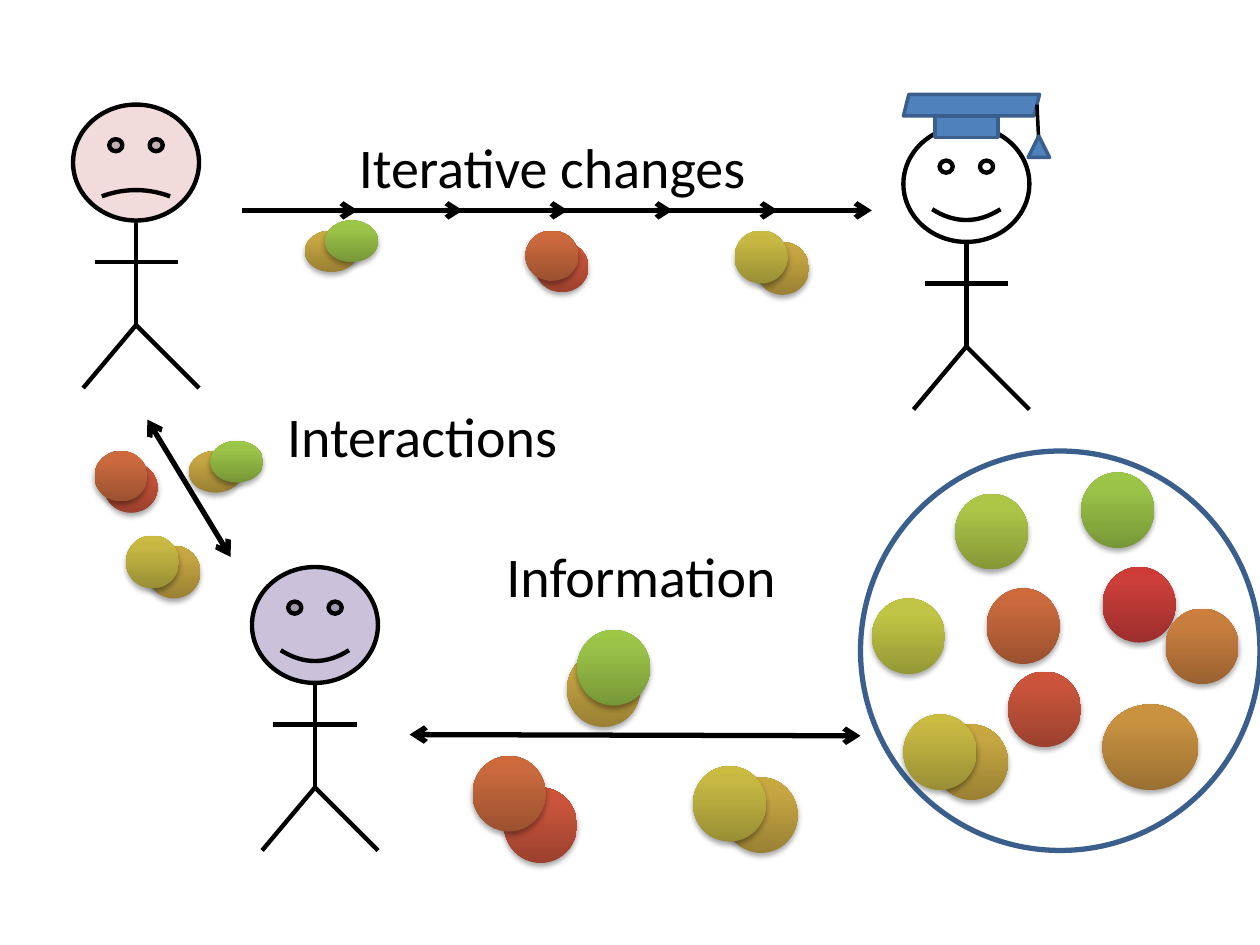
from copy import deepcopy

from pptx import Presentation, util as u
from pptx.dml.color import RGBColor
from pptx.enum import shapes, text
from pptx.oxml import parse_xml
from pptx.oxml.ns import nsdecls, qn
from pptx.oxml.xmlchemy import OxmlElement

BLACK = RGBColor(0x00, 0x00, 0x00)
BLUE = RGBColor(0x4F, 0x81, 0xBD)
NAVY = RGBColor(0x3A, 0x5F, 0x8C)
PINK = RGBColor(0xF2, 0xDC, 0xDB)
LILAC = RGBColor(0xCC, 0xC1, 0xDA)


def shades(*codes):
    return [RGBColor.from_string(c) for c in codes]


# Ball colours: bottom, upper part, top
CRIMSON = shades("9C2F2D", "CB3E3A", "CE3B37")
RED = shades("9B412E", "C9543B", "CD5339")
RUST = shades("9B512F", "C9693D", "CD693B")
ORANGE = shades("9A6130", "C87E3F", "CC7E3C")
AMBER = shades("9A7031", "C89240", "CB933D")
GOLD = shades("998033", "C6A642", "CAA840")
OLIVE = shades("998E34", "C6B843", "CABB41")
LIME = shades("949835", "C0C545", "C3C842")
MOSS = shades("859736", "ADC547", "AFC845")
GREEN = shades("779737", "9BC348", "9DC746")

SHADOW = (f'<a:outerShdw {nsdecls("a")} blurRad="40000" dist="23000" dir="5400000" '
          'rotWithShape="0"><a:srgbClr val="000000"><a:alpha val="35000"/>'
          '</a:srgbClr></a:outerShdw>')
SHAPE = shapes.MSO_SHAPE


class Sketch:
    FONT = {"name": "Calibri", "size": u.Pt(32)}

    def __init__(self, slide):
        self.s = slide

    def shape(self, kind, x, y, w, h, fill=None, line=None, width=2):
        sp = self.s.shapes.add_shape(kind, *map(u.Inches, (x, y, w, h)))
        sp.shadow.inherit = False
        if fill is None:
            sp.fill.background()
        else:
            sp.fill.solid()
            sp.fill.fore_color.rgb = fill
        if line is None:
            sp.line.fill.background()
        else:
            sp.line.color.rgb = line
            sp.line.width = u.Pt(width)
        return sp

    def line(self, x1, y1, x2, y2, width=2.5, ends=()):
        c = self.s.shapes.add_connector(
            shapes.MSO_CONNECTOR.STRAIGHT, *map(u.Inches, (x1, y1, x2, y2)))
        c.line.color.rgb = BLACK
        c.line.width = u.Pt(width)
        props = c._element.spPr
        for end in ends:
            arrow = OxmlElement(f"a:{end}")
            arrow.set("type", "arrow")
            props.find(qn("a:ln")).append(arrow)
        props.append(OxmlElement("a:effectLst"))

    def ball(self, colours, x, y, w=0.58, h=0.6):
        sp = self.shape(SHAPE.OVAL, x, y, w, h)
        sp.fill.gradient()
        sp.fill.gradient_angle = 90
        props = sp._element.spPr
        stops = props.find(qn("a:gradFill")).find(qn("a:gsLst"))
        stops.append(deepcopy(stops[-1]))
        for stop, place, colour in zip(sp.fill.gradient_stops, (0, 0.8, 1), colours):
            stop.position = place
            stop.color.rgb = colour
        props.find(qn("a:effectLst")).append(parse_xml(SHADOW))

    def pair(self, back, front, w=0.58, h=0.6):
        for colours, x, y in (back, front):
            self.ball(colours, x, y, w, h)

    def person(self, x, y, fill=None, smile=0.047):
        for x1, y1, x2, y2 in (
            (0.5, 0.92, 0.5, 1.75),    # body
            (0.17, 1.25, 0.83, 1.25),  # arms
            (0.5, 1.75, 0.08, 2.25),   # legs
            (0.5, 1.75, 1, 2.25),
        ):
            self.line(x + x1, y + y1, x + x2, y + y2)
        face = self.shape(SHAPE.SMILEY_FACE, x, y, 1, 0.92, fill, BLACK, 2.5)
        face.adjustments[0] = smile

    def label(self, words, x, y, w, h=0.64):
        tf = self.s.shapes.add_textbox(*map(u.Inches, (x, y, w, h))).text_frame
        tf.word_wrap = True
        tf.auto_size = text.MSO_AUTO_SIZE.SHAPE_TO_FIT_TEXT
        r = tf.paragraphs[0].add_run()
        r.text = words
        for key, value in self.FONT.items():
            setattr(r.font, key, value)
        r.font.color.rgb = BLACK


def main():
    prs = Presentation()
    prs.slide_width, prs.slide_height = u.Inches(10), u.Inches(7.5)
    sk = Sketch(prs.slides.add_slide(prs.slide_layouts[6]))
    both = ("headEnd", "tailEnd")

    # Pool of information
    sk.shape(SHAPE.OVAL, 6.83, 3.58, 3.17, 3.17, line=NAVY, width=3)
    for colours, x, y in (
        (CRIMSON, 8.75, 4.5), (RED, 8, 5.33), (RUST, 7.83, 4.67),
        (ORANGE, 9.25, 4.83), (LIME, 6.92, 4.75), (MOSS, 7.58, 3.92),
        (GREEN, 8.58, 3.75),
    ):
        sk.ball(colours, x, y)
    sk.ball(AMBER, 8.75, 5.59, 0.76, 0.68)
    sk.pair((GOLD, 7.42, 5.75), (OLIVE, 7.17, 5.67))

    # Teacher and the information exchanged with the pool
    sk.person(2, 4.5, LILAC)
    sk.pair((GOLD, 4.5, 5.17), (GREEN, 4.58, 5))
    sk.pair((RED, 4, 6.25), (RUST, 3.75, 6))
    sk.pair((GOLD, 5.75, 6.17), (OLIVE, 5.5, 6.08))
    sk.line(3.25, 5.83, 6.83, 5.84, 3, both)
    sk.label("Information", 3.92, 4.25, 2.5)

    # Learner and the interactions with the teacher
    sk.person(0.58, 0.83, PINK, smile=-0.027)
    sk.line(1.17, 3.33, 1.83, 4.42, 3, both)
    sk.pair((RED, 0.83, 3.67), (RUST, 0.75, 3.58), 0.42, 0.4)
    sk.pair((GOLD, 1.5, 3.58), (GREEN, 1.67, 3.5), 0.42, 0.33)
    sk.pair((GOLD, 1.17, 4.33), (OLIVE, 1, 4.25), 0.42, 0.42)
    sk.label("Interactions", 2.18, 3.14, 3.17)

    # Chain of iterative changes
    sk.label("Iterative changes", 2.75, 1, 3.75)
    for x in [1.92 + i * 5 / 6 for i in range(5)] + [6]:
        sk.line(x, 1.67, x + 0.92, 1.67, 3, ("tailEnd",))
    sk.pair((GOLD, 2.42, 1.83), (GREEN, 2.58, 1.75), 0.42, 0.33)
    sk.pair((RED, 4.25, 1.92), (RUST, 4.17, 1.83), 0.42, 0.4)
    sk.pair((GOLD, 6, 1.92), (OLIVE, 5.83, 1.83), 0.42, 0.42)

    # Graduate with cap and tassel
    sk.person(7.17, 1)
    sk.shape(SHAPE.PARALLELOGRAM, 7.17, 0.75, 1.08, 0.17, BLUE, NAVY)
    sk.shape(SHAPE.RECTANGLE, 7.42, 0.92, 0.5, 0.17, BLUE, NAVY)
    sk.line(8.23, 0.83, 8.25, 1.25, 2)
    sk.shape(SHAPE.ISOSCELES_TRIANGLE, 8.16, 1.08, 0.17, 0.17, BLUE, NAVY)

    prs.save("out.pptx")


if __name__ == "__main__":
    main()
